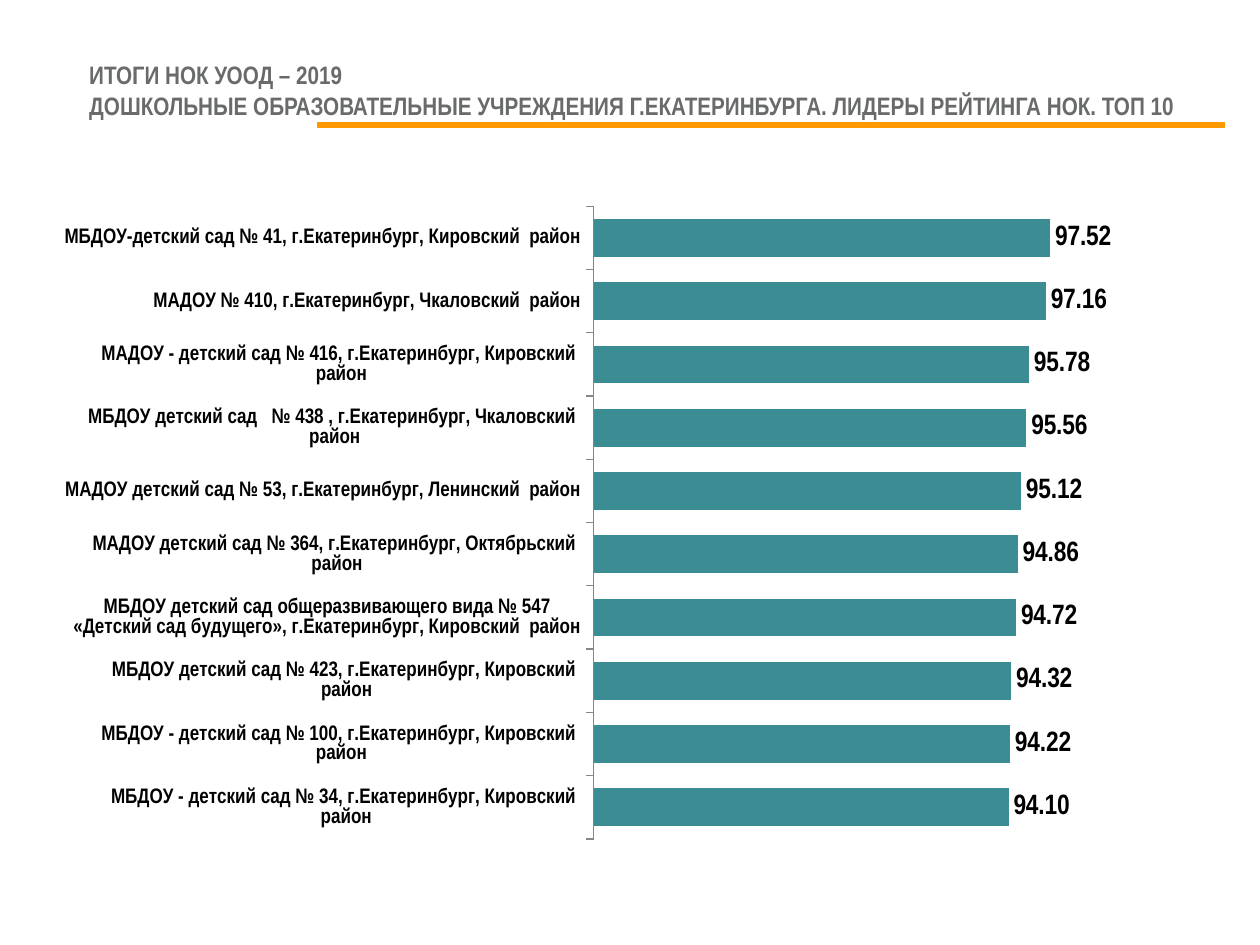
import pptx
import pptx.chart.data
import pptx.dml.color
import pptx.enum.chart
import pptx.enum.shapes
import pptx.enum.text
import pptx.oxml
import pptx.oxml.ns
import pptx.util
from pptx.util import Cm, Pt

FONT = "Arial Narrow"
TITLE = [
    "ИТОГИ НОК УООД – 2019",
    "ДОШКОЛЬНЫЕ ОБРАЗОВАТЕЛЬНЫЕ УЧРЕЖДЕНИЯ Г.ЕКАТЕРИНБУРГА. ЛИДЕРЫ РЕЙТИНГА НОК. ТОП 10",
]
RATING = [
    ("МБДОУ-детский сад № 41, г.Екатеринбург, Кировский  район", 97.52),
    ("МАДОУ № 410, г.Екатеринбург, Чкаловский  район", 97.16),
    ("МАДОУ - детский сад № 416, г.Екатеринбург, Кировский  район", 95.78),
    ("МБДОУ детский сад   № 438 , г.Екатеринбург, Чкаловский  район", 95.56),
    ("МАДОУ детский сад № 53, г.Екатеринбург, Ленинский  район", 95.12),
    ("МАДОУ детский сад № 364, г.Екатеринбург, Октябрьский  район", 94.86),
    ("МБДОУ детский сад общеразвивающего вида № 547 «Детский сад будущего», "
     "г.Екатеринбург, Кировский  район", 94.72),
    ("МБДОУ детский сад № 423, г.Екатеринбург, Кировский  район", 94.32),
    ("МБДОУ - детский сад № 100, г.Екатеринбург, Кировский  район", 94.22),
    ("МБДОУ - детский сад № 34, г.Екатеринбург, Кировский  район", 94.10),
]
PLOT_AREA = {"x": 0.463, "y": 0.045, "w": 0.434, "h": 0.911}


def color(value):
    return pptx.dml.color.RGBColor.from_string(value)


def set_font(font, size, value, bold=True):
    font.name, font.size, font.bold = FONT, Pt(size), bold
    font.color.rgb = color(value)


def add_title(page):
    box = page.shapes.add_textbox(Cm(1.55), Cm(1.09), Cm(22.86), Cm(1.45))
    frame = box.text_frame
    frame.word_wrap = True
    frame.vertical_anchor = pptx.enum.text.MSO_ANCHOR.MIDDLE
    para = frame.paragraphs[0]
    para.text = "\v".join(TITLE)
    set_font(para.font, 14.4, "696B6B")


def add_rule(page):
    rule = page.shapes.add_connector(
        pptx.enum.shapes.MSO_CONNECTOR.STRAIGHT,
        Cm(6.4), Cm(2.52), Cm(24.69), Cm(2.52))
    rule.line.color.rgb = color("FF9900")
    rule.line.width = Pt(3)
    properties = rule._element.spPr
    properties.append(properties.makeelement(pptx.oxml.ns.qn("a:effectLst"), {}))


def place_plot(chart):
    """Fix the inner plot area as fractions of the chart frame."""
    plot_area = chart._chartSpace.chart.plotArea
    for old in plot_area.findall(pptx.oxml.ns.qn("c:layout")):
        plot_area.remove(old)
    modes = '<c:xMode val="edge"/><c:yMode val="edge"/>'
    sizes = "".join(f'<c:{key} val="{part}"/>' for key, part in PLOT_AREA.items())
    plot_area.insert(0, pptx.oxml.parse_xml(
        f'<c:layout {pptx.oxml.ns.nsdecls("c")}><c:manualLayout>'
        f'<c:layoutTarget val="inner"/>{modes}{sizes}'
        '</c:manualLayout></c:layout>'))


def add_rating_chart(page):
    names, scores = zip(*RATING)
    data = pptx.chart.data.CategoryChartData(number_format="#,##0.00")
    data.categories = names
    data.add_series("Series 1", scores)
    chart = page.shapes.add_chart(
        pptx.enum.chart.XL_CHART_TYPE.BAR_CLUSTERED,
        Cm(1.3), Cm(3.53), Cm(22.81), Cm(14), data).chart
    chart.has_legend = False
    chart.has_title = False
    set_font(chart.font, 14, "000000", bold=False)
    place_plot(chart)

    names_axis = chart.category_axis
    names_axis.reverse_order = True
    names_axis.has_major_gridlines = False
    names_axis.major_tick_mark = pptx.enum.chart.XL_TICK_MARK.OUTSIDE
    names_axis.format.line.color.rgb = color("868686")
    names_axis.format.line.width = Pt(0.75)
    set_font(names_axis.tick_labels.font, 12, "000000")

    score_axis = chart.value_axis
    score_axis.minimum_scale, score_axis.maximum_scale = 60, 100
    score_axis.major_unit = 10
    score_axis.has_major_gridlines = False
    score_axis.visible = False

    plot = chart.plots[0]
    plot.gap_width = 68
    plot.vary_by_categories = False
    bars = plot.series[0]
    bars.format.fill.solid()
    bars.format.fill.fore_color.rgb = color("3C8C93")
    labels = bars.data_labels
    labels.show_value = True
    labels.number_format = "#,##0.00"
    labels.number_format_is_linked = False
    labels.position = pptx.enum.chart.XL_LABEL_POSITION.OUTSIDE_END
    set_font(labels.font, 16, "000000")


def main():
    deck = pptx.Presentation()
    deck.slide_width, deck.slide_height = Cm(25.4), Cm(19.05)
    page = deck.slides.add_slide(deck.slide_layouts[6])
    add_title(page)
    add_rule(page)
    add_rating_chart(page)
    deck.save("out.pptx")


if __name__ == "__main__":
    main()
